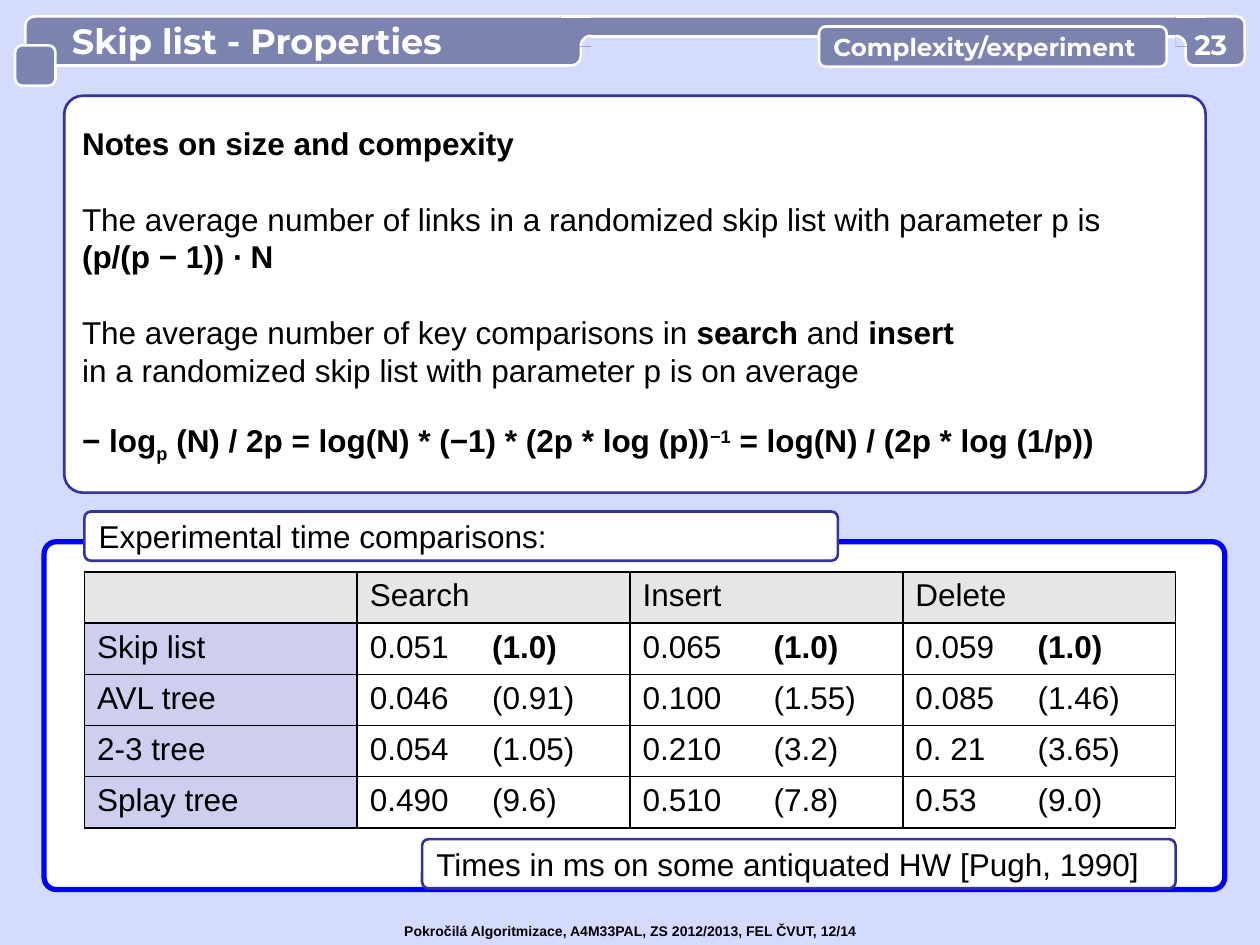
from dataclasses import dataclass
from math import cos, pi, sin

from lxml.etree import SubElement
from pptx import Presentation
from pptx.dml.color import RGBColor
from pptx.enum.shapes import MSO_CONNECTOR, MSO_SHAPE
from pptx.enum.text import MSO_ANCHOR, PP_ALIGN
from pptx.oxml.ns import qn
from pptx.util import Inches, Pt

BACKGROUND, BAR, WHITE, BLACK = "D5DAFF", "7D83AF", "FFFFFF", "000000"
NAVY, BLUE, HEADER_GREY, LABEL_LILAC = "333399", "0000FF", "E6E6E6", "CECEEF"
BODY_FONT, TITLE_FONT = "Arial", "Montserrat"
LINE_PITCH = 21.6


@dataclass
class Box:
    left: float
    top: float
    width: float
    height: float
    corner: float = 0
    fill: str = BAR
    line: str | None = WHITE
    line_width: float = 1.5

    def lengths(self):
        return [Inches(value) for value in (self.left, self.top, self.width, self.height)]


@dataclass
class TextStyle:
    size: float = 18
    color: str = BLACK
    font: str = BODY_FONT
    bold: bool = False


@dataclass
class Piece:
    text: str
    bold: bool = True
    baseline: int = 0


@dataclass
class Note:
    pieces: list[Piece]
    gap_before: bool = False


NOTES = [
    Note([Piece("Notes on size and compexity")]),
    Note([Piece("The average number of links in a randomized skip list with parameter p is", False)], True),
    Note([Piece("(p/(p − 1)) ∙ N")]),
    Note([Piece("The average number of key comparisons in ", False), Piece("search "),
          Piece("and ", False), Piece("insert")], True),
    Note([Piece("in a randomized skip list with parameter p is on average", False)]),
    Note([Piece("− log"), Piece("p", baseline=-25000),
          Piece(" (N) / 2p = log(N) * (−1) * (2p * log (p))"), Piece("−1", baseline=30000),
          Piece(" = log(N) / (2p * log (1/p))")], True),
]
OPERATIONS = ["", "Search", "Insert", "Delete"]
TIMES = [
    ("Skip list", "0.051\t(1.0)", "0.065\t(1.0)", "0.059\t(1.0)"),
    ("AVL tree", "0.046\t(0.91)", "0.100\t(1.55)", "0.085\t(1.46)"),
    ("2-3 tree", "0.054\t(1.05)", "0.210\t(3.2)", "0. 21\t(3.65)"),
    ("Splay tree", "0.490\t(9.6)", "0.510\t(7.8)", "0.53\t(9.0)"),
]
RATIO_TABS = [0, 0.97, 1.04, 0.97]


def rgb(value: str) -> RGBColor:
    return RGBColor.from_string(value)


def paint(shape, fill: str | None, line: str | None, line_width: float = 1.5) -> None:
    shape.shadow.inherit = False
    if fill:
        shape.fill.solid()
        shape.fill.fore_color.rgb = rgb(fill)
    else:
        shape.fill.background()
    if line:
        shape.line.color.rgb = rgb(line)
        shape.line.width = Pt(line_width)
    else:
        shape.line.fill.background()


def add_box(slide, box: Box):
    kind = MSO_SHAPE.ROUNDED_RECTANGLE if box.corner else MSO_SHAPE.RECTANGLE
    shape = slide.shapes.add_shape(kind, *box.lengths())
    if box.corner:
        shape.adjustments[0] = box.corner
    paint(shape, box.fill, box.line, box.line_width)
    return shape


def style_paragraph(paragraph, style: TextStyle) -> None:
    font = paragraph.font
    font.name, font.size, font.bold = style.font, Pt(style.size), style.bold
    font.color.rgb = rgb(style.color)


def write(shape, text: str, style: TextStyle, inset: float = 0.1) -> None:
    frame = shape.text_frame
    frame.word_wrap = True
    frame.vertical_anchor = MSO_ANCHOR.MIDDLE
    frame.margin_left = Inches(inset)
    paragraph = frame.paragraphs[0]
    paragraph.text = text
    paragraph.alignment = PP_ALIGN.LEFT
    style_paragraph(paragraph, style)


def write_notes(shape, notes: list[Note]) -> None:
    frame = shape.text_frame
    frame.word_wrap = True
    frame.vertical_anchor = MSO_ANCHOR.MIDDLE
    for index, note in enumerate(notes):
        paragraph = frame.add_paragraph() if index else frame.paragraphs[0]
        paragraph.alignment = PP_ALIGN.LEFT
        paragraph.line_spacing = Pt(LINE_PITCH)
        paragraph.space_before = Pt(LINE_PITCH if note.gap_before else 0)
        style_paragraph(paragraph, TextStyle())
        for piece in note.pieces:
            run = paragraph.add_run()
            run.text = piece.text
            run.font.bold = piece.bold
            if piece.baseline:
                run._r.get_or_add_rPr().set("baseline", str(piece.baseline))


def add_border(cell) -> None:
    properties = cell._tc.get_or_add_tcPr()
    for index, side in enumerate(("a:lnL", "a:lnR", "a:lnT", "a:lnB")):
        line = properties.makeelement(qn(side), {"w": str(Pt(1))})
        SubElement(SubElement(line, qn("a:solidFill")), qn("a:srgbClr"), val=BLACK)
        properties.insert(index, line)


def add_times_table(slide) -> None:
    rows = [OPERATIONS, *TIMES]
    area = Box(0.67, 4.54, 8.66, 2.03)
    table = slide.shapes.add_table(len(rows), len(OPERATIONS), *area.lengths()).table
    table.first_row = table.horz_banding = False
    for row_index, row in enumerate(rows):
        for column_index, text in enumerate(row):
            cell = table.cell(row_index, column_index)
            cell.fill.solid()
            color = HEADER_GREY if row_index == 0 else WHITE if column_index else LABEL_LILAC
            cell.fill.fore_color.rgb = rgb(color)
            add_border(cell)
            paragraph = cell.text_frame.paragraphs[0]
            style_paragraph(paragraph, TextStyle())
            time, tab, ratio = text.partition("\t")
            paragraph.add_run().text = time + tab
            if ratio:
                run = paragraph.add_run()
                run.text = ratio
                run.font.bold = row_index == 1
                tabs = SubElement(paragraph._p.get_or_add_pPr(), qn("a:tabLst"))
                SubElement(tabs, qn("a:tab"), pos=str(Inches(RATIO_TABS[column_index])), algn="l")
                properties = paragraph._p.pPr
                properties.insert(0, tabs)


def add_bar_joint(slide, edge: float, side: int) -> None:
    """Blend the thin bar into a tab whose outline ends near edge; side is -1 for left, 1 for right."""
    top, size, radius, center_y = 0.13, 0.24, 0.08, 0.365
    add_box(slide, Box(min(edge, edge + side * size), top, size, size, line=None))
    rule = slide.shapes.add_connector(MSO_CONNECTOR.STRAIGHT, Inches(edge + side * size), Inches(top),
                                      Inches(edge), Inches(top))
    rule.line.color.rgb = rgb(WHITE)
    rule.line.width = Pt(1.5)
    SubElement(rule._element.spPr, qn("a:effectLst"))
    angles = [step * pi / 24 for step in range(13)]
    arc = [(Inches(edge + side * radius * sin(angle)), Inches(center_y - radius * cos(angle)))
           for angle in angles]
    center = (Inches(edge), Inches(center_y))
    for points, closed in ((arc + [center], True), (arc, False)):
        builder = slide.shapes.build_freeform(*points[0])
        builder.add_line_segments(points[1:], close=closed)
        paint(builder.convert_to_shape(), BACKGROUND if closed else None, None if closed else WHITE)


def add_header(slide) -> None:
    title = add_box(slide, Box(0.2, 0.13, 4.41, 0.39, 0.188))
    write(title, "Skip list - Properties", TextStyle(20, WHITE, TITLE_FONT, True), 0.35)
    add_box(slide, Box(4.61, 0.13, 4.88, 0.16, 0.5))
    add_bar_joint(slide, 4.69, -1)
    add_box(slide, Box(0.12, 0.36, 0.32, 0.32, 0.17))
    add_box(slide, Box(9.41, 0.13, 0.47, 0.39, 0.17))
    add_bar_joint(slide, 9.33, 1)
    topic = add_box(slide, Box(6.5, 0.21, 2.76, 0.32, 0.17))
    write(topic, "Complexity/experiment", TextStyle(14, WHITE, TITLE_FONT, True))
    number = slide.shapes.add_textbox(*Box(9.41, 0.22, 0.4, 0.27).lengths())
    write(number, "23", TextStyle(16, WHITE, TITLE_FONT, True), 0)
    frame = number.text_frame
    frame.margin_right = frame.margin_top = frame.margin_bottom = 0
    frame.paragraphs[0].alignment = PP_ALIGN.CENTER


def main() -> None:
    presentation = Presentation()
    presentation.slide_width, presentation.slide_height = Inches(10), Inches(7.5)
    slide = presentation.slides.add_slide(presentation.slide_layouts[6])
    slide.background.fill.solid()
    slide.background.fill.fore_color.rgb = rgb(BACKGROUND)

    add_box(slide, Box(0.35, 4.3, 9.37, 2.76, 0.035, WHITE, BLUE, 3))
    write_notes(add_box(slide, Box(0.51, 0.76, 9.06, 3.15, 0.047, WHITE, NAVY)), NOTES)
    add_times_table(slide)
    for left, top, caption in ((3.35, 6.66, "Times in ms on some antiquated HW [Pugh, 1990]"),
                               (0.67, 4.06, "Experimental time comparisons:")):
        write(add_box(slide, Box(left, top, 5.98, 0.39, 0.131, WHITE, NAVY)), caption, TextStyle())
    add_header(slide)
    footer = slide.shapes.add_textbox(*Box(3.11, 7.27, 3.9, 0.24).lengths())
    write(footer, "Pokročilá Algoritmizace, A4M33PAL, ZS 2012/2013, FEL ČVUT, 12/14", TextStyle(8, bold=True))
    presentation.save("out.pptx")


if __name__ == "__main__":
    main()
